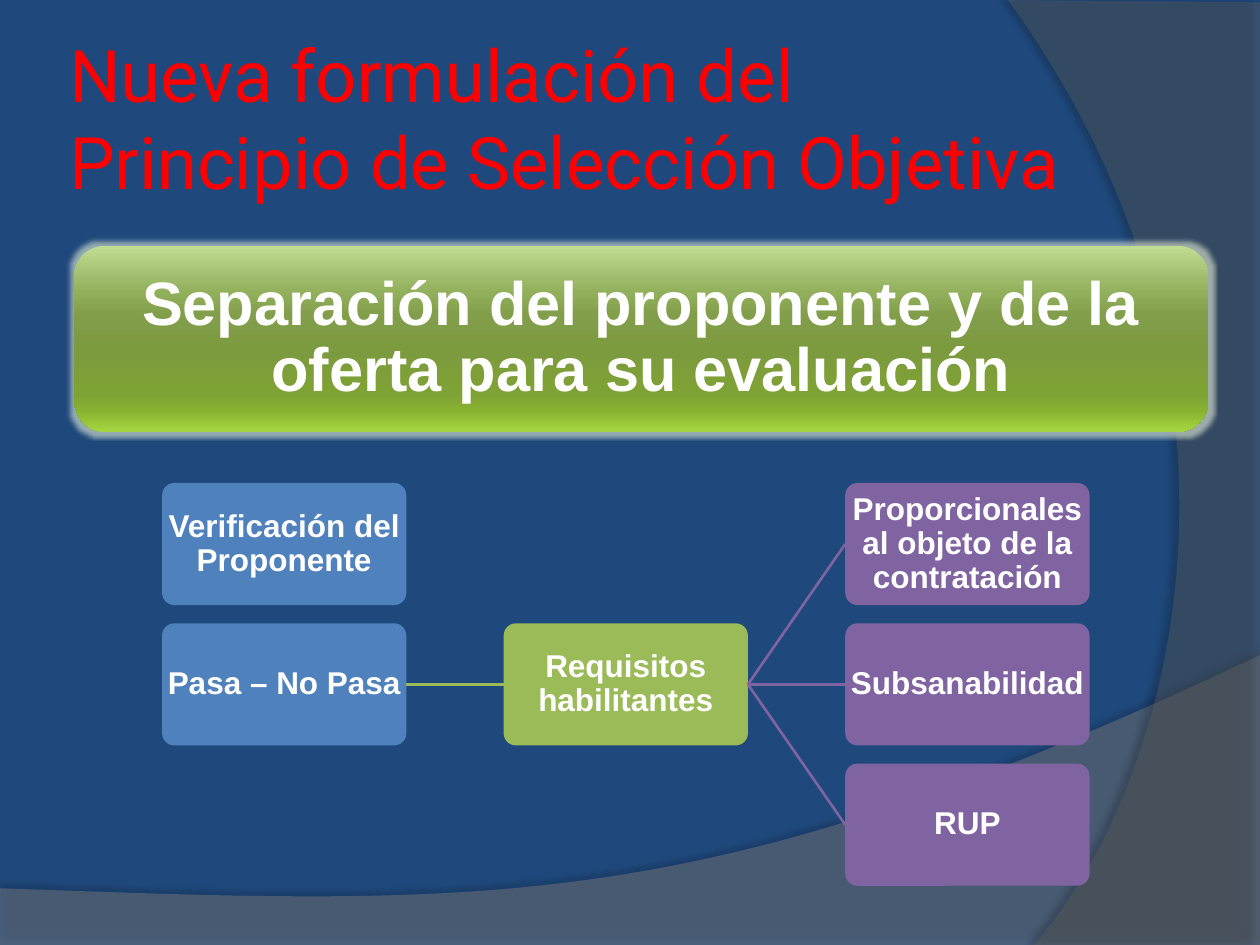
import typing

import lxml.etree
import pptx
import pptx.dml.color
import pptx.enum.shapes
import pptx.enum.text
import pptx.oxml.ns
import pptx.util

Pt = pptx.util.Pt
qn = pptx.oxml.ns.qn
KIND = pptx.enum.shapes.MSO_SHAPE.ROUNDED_RECTANGLE
ALIGN = pptx.enum.text.PP_ALIGN

HUES = {
    "back": "1F497D", "title": "FF0000", "text": "FFFFFF", "glow": "E6EFD9",
    "blue": "4F81BD", "green": "9BBB59", "purple": "8064A2",
    "low": "7F7F7F", "side": "5E5E5E", "shade": "000000",
}
BLEND = [(0, "C0DD92"), (25, "92AF5C"), (38, "829E4B"), (55, "7C9A3E"),
         (80, "7EA234"), (88, "87B131"), (100, "A5D640")]

# Grid of the diagram, in points
LEFT, TOP = 92.6, 276
STEP_X, STEP_Y = 195.2, 80.2
BOX_W, BOX_H = 139.6, 69.8
LEFT_SITE, RIGHT_SITE = 1, 3

Point = tuple[float, float]


class Box(typing.NamedTuple):
    name: str
    text: str
    col: int
    row: int
    hue: str


class Link(typing.NamedTuple):
    start: str
    end: str
    hue: str


class Wave(typing.NamedTuple):
    edge: list[Point]    # straight corners, ending where the curve starts
    curve: list[Point]   # two controls and the end point
    hue: str
    alpha: int
    shade: int
    blur: float
    gap: float
    angle: int


WAVES = [
    Wave([(0, 507.6), (0, 540), (720, 540), (720, 374.4)],
         [(402.5, 524.9), (281.5, 517.7), (0, 507.6)],
         "low", 45, 35, 4, 3.5, 270),
    Wave([(576, 0), (720, 1.4), (720, 540), (591, 540)],
         [(673.2, 445.7), (733, 216), (576, 0)],
         "side", 40, 45, 4, 4, 180),
]
BOXES = [
    Box("check", "Verificación del Proponente", 0, 0, "blue"),
    Box("pass", "Pasa – No Pasa", 0, 1, "blue"),
    Box("needs", "Requisitos habilitantes", 1, 1, "green"),
    Box("ratio", "Proporcionales al objeto de la contratación", 2, 0, "purple"),
    Box("mend", "Subsanabilidad", 2, 1, "purple"),
    Box("rup", "RUP", 2, 2, "purple"),
]
LINKS = [
    Link("pass", "needs", "green"), Link("needs", "ratio", "purple"),
    Link("needs", "mend", "purple"), Link("needs", "rup", "purple"),
]


def tint(name: str) -> pptx.dml.color.RGBColor:
    return pptx.dml.color.RGBColor.from_string(HUES[name])


def add_node(root, tag: str, **attrs):
    values = {key: str(value) for key, value in attrs.items()}
    return lxml.etree.SubElement(root, qn(tag), values)


def add_tone(root, code: str, alpha: int = 100) -> None:
    node = add_node(root, "a:srgbClr", val=code)
    if alpha < 100:
        add_node(node, "a:alpha", val=alpha * 1000)


def bend(start: Point, curve: list[Point], count: int = 48) -> list[Point]:
    """Points along a cubic curve."""
    one, two, end = curve
    out = []
    for i in range(1, count + 1):
        t = i / count
        u = 1 - t
        out.append(tuple(
            u**3 * a + 3 * u * u * t * b + 3 * u * t * t * c + t**3 * d
            for a, b, c, d in zip(start, one, two, end)))
    return out


def draw_wave(slide, wave: Wave) -> None:
    path = wave.edge + bend(wave.edge[-1], wave.curve)
    spots = [(Pt(x), Pt(y)) for x, y in path]
    build = slide.shapes.build_freeform(*spots[0], scale=1.0)
    build.add_line_segments(spots[1:], close=True)
    shape = build.convert_to_shape()
    shape.fill.solid()
    shape.fill.fore_color.rgb = tint(wave.hue)
    shape.line.fill.background()
    shape.shadow.inherit = False
    props = shape._element.spPr
    tone = props.find(qn("a:solidFill")).find(qn("a:srgbClr"))
    add_node(tone, "a:alpha", val=wave.alpha * 1000)
    cast = add_node(props.find(qn("a:effectLst")), "a:outerShdw",
                    blurRad=Pt(wave.blur), dist=Pt(wave.gap),
                    dir=wave.angle * 60000, algn="ctr", rotWithShape=0)
    add_tone(cast, HUES["shade"], wave.shade)


def write(shape, text: str, size: float, font: str, hue: str, pad: float,
          bold: bool = True, align=ALIGN.CENTER, pitch: float = 0.9) -> None:
    frame = shape.text_frame
    frame.word_wrap = True
    frame.vertical_anchor = pptx.enum.text.MSO_ANCHOR.MIDDLE
    frame.margin_left = frame.margin_right = Pt(pad)
    frame.margin_top = frame.margin_bottom = Pt(pad)
    para = frame.paragraphs[0]
    para.alignment = align
    para.line_spacing = pitch
    run = para.add_run()
    run.text = text
    run.font.size = Pt(size)
    run.font.name = font
    run.font.bold = bold
    run.font.color.rgb = tint(hue)


def draw_title(slide) -> None:
    shape = slide.shapes.add_textbox(Pt(36), Pt(21.6), Pt(588), Pt(90))
    write(shape, "Nueva formulación del Principio de Selección Objetiva",
          41.4, "Roboto", "title", 3.6, False, ALIGN.LEFT, 1.0)


def draw_banner(slide) -> None:
    shape = slide.shapes.add_shape(KIND, Pt(42.5), Pt(140.4), Pt(648), Pt(106.5))
    shape.fill.gradient()
    shape.fill.gradient_angle = 270
    shape.line.fill.background()
    shape.shadow.inherit = False
    props = shape._element.spPr
    stops = props.find(qn("a:gradFill")).find(qn("a:gsLst"))
    for old in list(stops):
        stops.remove(old)
    for place, code in BLEND:
        add_tone(add_node(stops, "a:gs", pos=place * 1000), code)
    glow = add_node(props.find(qn("a:effectLst")), "a:glow", rad=Pt(5))
    add_tone(glow, HUES["glow"], 60)
    write(shape, "Separación del proponente y de la oferta para su evaluación",
          35, "Arial", "text", 5.6)


def draw_box(slide, box: Box):
    shape = slide.shapes.add_shape(
        KIND, Pt(LEFT + box.col * STEP_X), Pt(TOP + box.row * STEP_Y),
        Pt(BOX_W), Pt(BOX_H))
    shape.adjustments[0] = 0.1
    shape.fill.solid()
    shape.fill.fore_color.rgb = tint(box.hue)
    shape.line.fill.background()
    shape.shadow.inherit = False
    write(shape, box.text, 18, "Arial", "text", 0)
    return shape


def draw_link(slide, link: Link, nodes: dict) -> None:
    line = slide.shapes.add_connector(
        pptx.enum.shapes.MSO_CONNECTOR.STRAIGHT, 0, 0, 0, 0)
    line.begin_connect(nodes[link.start], RIGHT_SITE)
    line.end_connect(nodes[link.end], LEFT_SITE)
    line.line.color.rgb = tint(link.hue)
    line.line.width = Pt(1.5)
    add_node(line._element.spPr, "a:effectLst")


def main() -> None:
    deck = pptx.Presentation()
    deck.slide_width, deck.slide_height = Pt(720), Pt(540)
    slide = deck.slides.add_slide(deck.slide_layouts[6])

    # Backdrop
    slide.background.fill.solid()
    slide.background.fill.fore_color.rgb = tint("back")
    for wave in WAVES:
        draw_wave(slide, wave)

    # Heading
    draw_title(slide)
    draw_banner(slide)

    # Diagram
    nodes = {box.name: draw_box(slide, box) for box in BOXES}
    for link in LINKS:
        draw_link(slide, link, nodes)

    deck.save("out.pptx")


if __name__ == "__main__":
    main()
